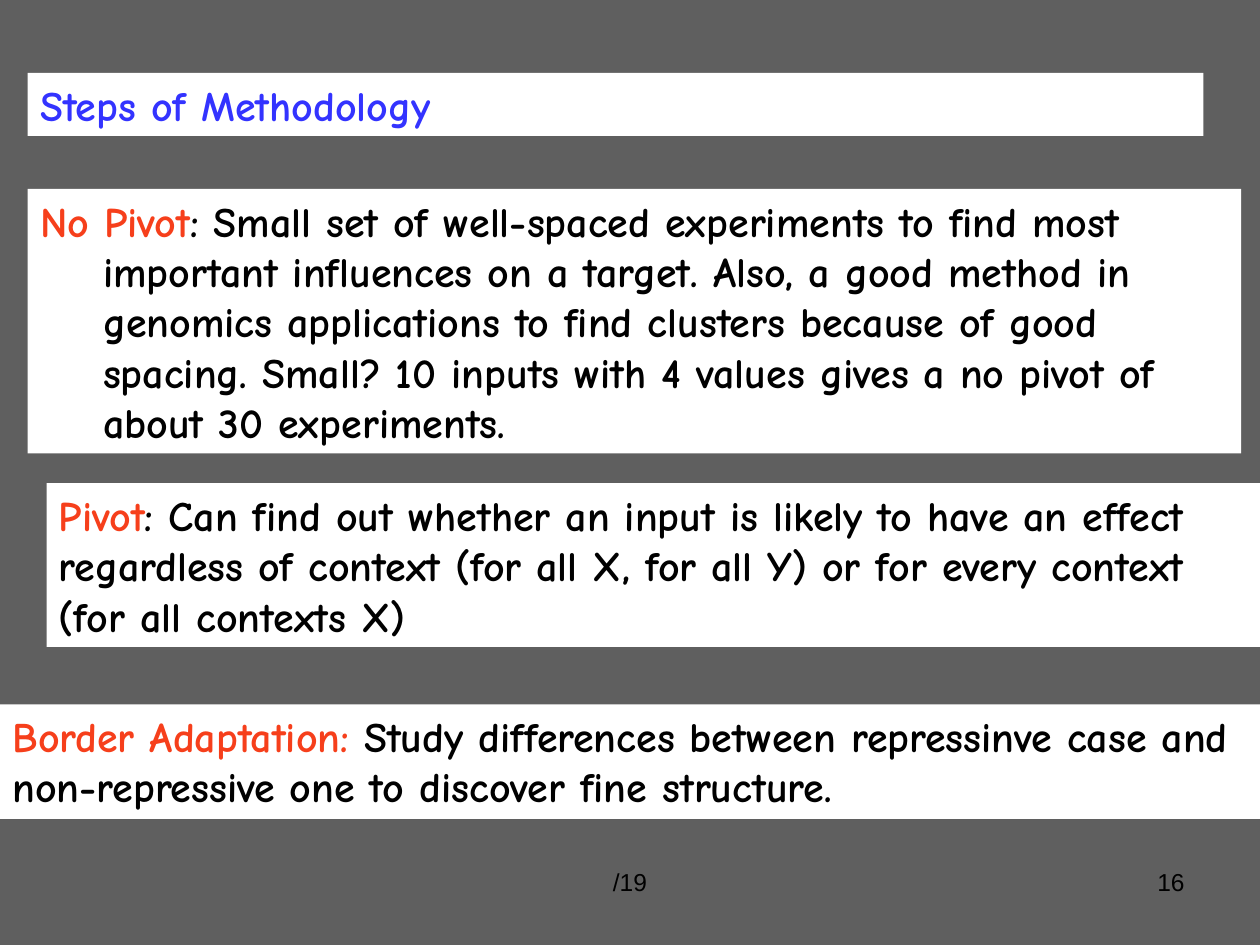
from pptx import Presentation
from pptx.dml.color import RGBColor
from pptx.enum.shapes import MSO_SHAPE
from pptx.enum.text import MSO_ANCHOR, MSO_AUTO_SIZE, PP_ALIGN
from pptx.util import Cm, Pt

RECTANGLE = MSO_SHAPE.RECTANGLE
TOP = MSO_ANCHOR.TOP
GROW = MSO_AUTO_SIZE.SHAPE_TO_FIT_TEXT
LEFT, CENTER, RIGHT = PP_ALIGN.LEFT, PP_ALIGN.CENTER, PP_ALIGN.RIGHT

GREY = RGBColor(0x5F, 0x5F, 0x5F)
WHITE = RGBColor(0xFF, 0xFF, 0xFF)
BLACK = RGBColor(0x00, 0x00, 0x00)
BLUE = RGBColor(0x33, 0x33, 0xFF)
RED = RGBColor(0xF6, 0x3F, 0x1B)

BODY_FONT = "Comic Neue"
FOOTER_FONT = "Arial"
HANGING = Cm(1.27)

STEPS = [
    ((0.56, 3.81, 24.46, 5.33), HANGING, "No Pivot",
     ": Small set of well-spaced experiments to find most important "
     "influences on a target. Also, a good method in genomics applications "
     "to find clusters because of good spacing. Small? 10 inputs with 4 "
     "values gives a no pivot of about 30 experiments."),
    ((0.94, 9.74, 24.46, 3.3), 0, "Pivot",
     ": Can find out whether an input is likely to have an effect regardless "
     "of context (for all X, for all Y) or for every context "
     "(for all contexts X)"),
    ((0, 14.2, 25.4, 2.31), 0, "Border Adaptation:",
     " Study differences between repressinve case and non-repressive one "
     "to discover fine structure."),
]


def add_run(paragraph, text, font_name, size, color, bold):
    run = paragraph.add_run()
    run.text = text
    run.font.name = font_name
    run.font.size = Pt(size)
    run.font.bold = bold
    run.font.color.rgb = color


def add_panel(slide, box, runs, hanging=0):
    panel = slide.shapes.add_shape(RECTANGLE, *map(Cm, box))
    panel.shadow.inherit = False
    panel.fill.solid()
    panel.fill.fore_color.rgb = WHITE
    panel.line.fill.background()
    frame = panel.text_frame
    frame.word_wrap = True
    frame.auto_size = GROW
    frame.vertical_anchor = TOP
    paragraph = frame.paragraphs[0]
    paragraph.alignment = LEFT
    if hanging:
        properties = paragraph._p.get_or_add_pPr()
        properties.set("marL", str(hanging))
        properties.set("indent", str(-hanging))
    for text, color in runs:
        add_run(paragraph, text, BODY_FONT, 24, color, True)


def add_footer(slide, left, width, text, alignment):
    footer = slide.shapes.add_textbox(Cm(left), Cm(17.35), Cm(width), Cm(1.32))
    footer.text_frame.word_wrap = True
    paragraph = footer.text_frame.paragraphs[0]
    paragraph.alignment = alignment
    add_run(paragraph, text, FOOTER_FONT, 14, BLACK, False)


def main():
    presentation = Presentation()
    presentation.slide_width = Cm(25.4)
    presentation.slide_height = Cm(19.05)
    slide = presentation.slides.add_slide(presentation.slide_layouts[6])
    slide.background.fill.solid()
    slide.background.fill.fore_color.rgb = GREY

    add_footer(slide, 18.2, 5.93, "16", RIGHT)
    add_panel(slide, (0.56, 1.47, 23.7, 1.27), [("Steps of Methodology", BLUE)])
    for box, hanging, step, explanation in STEPS:
        add_panel(slide, box, [(step, RED), (explanation, BLACK)], hanging)
    add_footer(slide, 8.68, 8.04, "/19", CENTER)

    presentation.save("out.pptx")


if __name__ == "__main__":
    main()
